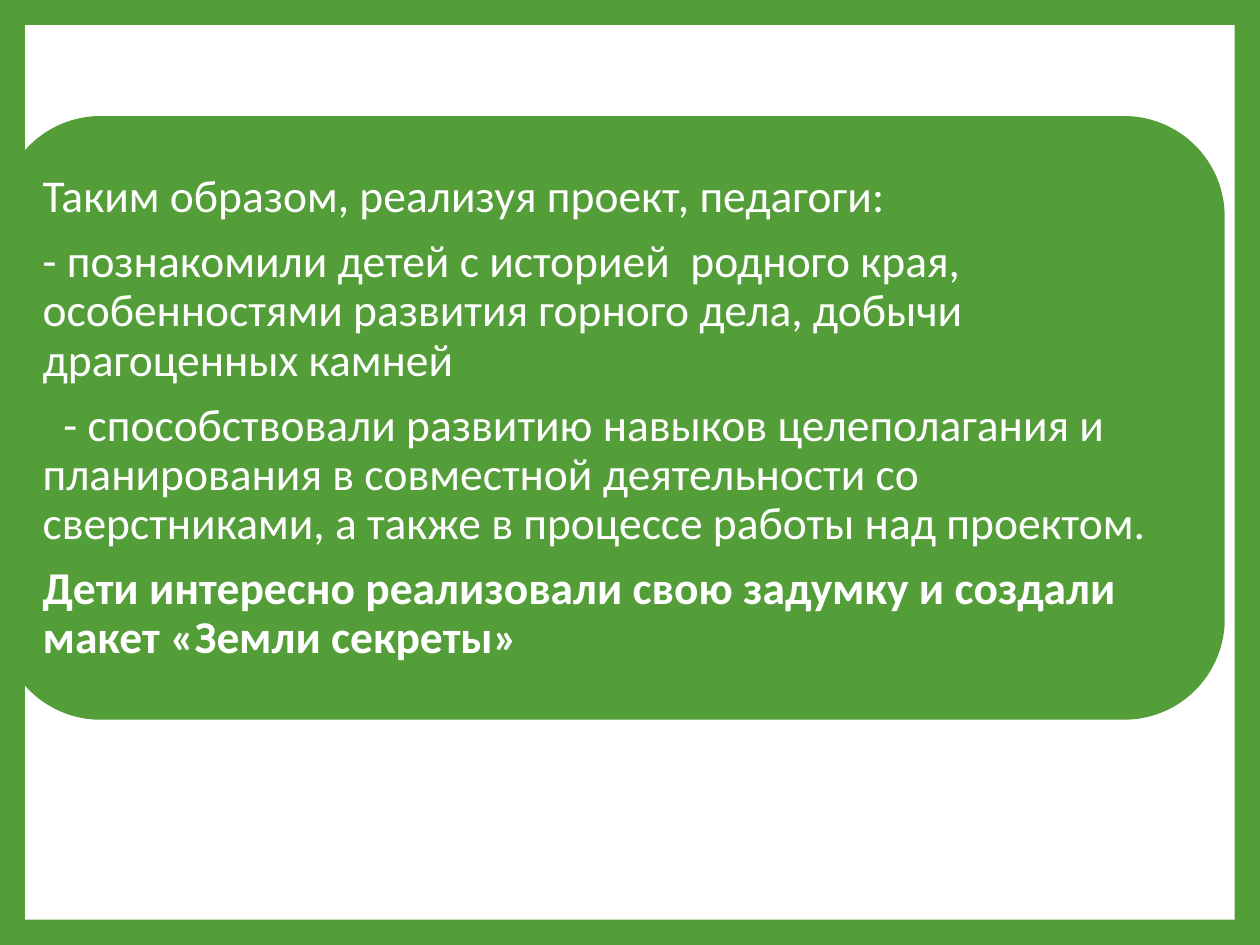
from dataclasses import dataclass

import pptx
import pptx.dml.color
import pptx.enum.shapes
import pptx.enum.text
import pptx.util
from pptx.util import Cm

GREEN = "549E39"
WHITE = "FFFFFF"
SHAPES = pptx.enum.shapes.MSO_SHAPE


@dataclass
class Panel:
    kind: int
    left: float
    top: float
    width: float
    height: float
    color: str


@dataclass
class Statement:
    text: str
    bold: bool = False
    indent: float = 0


PANELS = [
    Panel(SHAPES.RECTANGLE, 0.51, 0.51, 24.38, 18.03, WHITE),
    Panel(SHAPES.ROUNDED_RECTANGLE, 0, 2.34, 24.69, 12.17, GREEN),
]

STATEMENTS = [
    Statement("Таким образом, реализуя проект, педагоги:"),
    Statement("- познакомили детей с историей  родного края, особенностями "
              "развития горного дела, добычи драгоценных камней"),
    Statement("- способствовали развитию навыков целеполагания и планирования "
              "в совместной деятельности со сверстниками, а также в процессе "
              "работы над проектом.", indent=0.42),
    Statement("Дети интересно реализовали свою задумку и создали макет "
              "«Земли секреты»", bold=True),
]


def set_color(fmt, color: str) -> None:
    fmt.solid()
    fmt.fore_color.rgb = pptx.dml.color.RGBColor.from_string(color)


def add_panel(s, panel: Panel) -> None:
    sp = s.shapes.add_shape(panel.kind, Cm(panel.left), Cm(panel.top),
                            Cm(panel.width), Cm(panel.height))
    sp.shadow.inherit = False
    set_color(sp.fill, panel.color)
    sp.line.fill.background()


def add_statements(s, statements: list[Statement]) -> None:
    sp = s.shapes.add_textbox(Cm(0.58), Cm(2.95), Cm(23.52), Cm(10.97))
    tf = sp.text_frame
    tf.word_wrap = True
    tf.vertical_anchor = pptx.enum.text.MSO_ANCHOR.MIDDLE
    tf.margin_left = tf.margin_right = Cm(0.28)
    tf.margin_top = tf.margin_bottom = Cm(0.28)
    for i, statement in enumerate(statements):
        p = tf.add_paragraph() if i else tf.paragraphs[0]
        p.text = statement.text
        p.line_spacing = 0.9
        p.space_after = pptx.util.Pt(9.1)
        p.font.name = "Calibri"
        p.font.size = pptx.util.Pt(26)
        p.font.bold = statement.bold
        set_color(p.font.fill, WHITE)
        if statement.indent:
            p._p.get_or_add_pPr().set("indent", str(Cm(statement.indent)))


def main() -> None:
    prs = pptx.Presentation()
    prs.slide_width, prs.slide_height = Cm(25.4), Cm(19.05)
    s = prs.slides.add_slide(prs.slide_layouts[6])
    set_color(s.background.fill, GREEN)
    for panel in PANELS:
        add_panel(s, panel)
    add_statements(s, STATEMENTS)
    prs.save("out.pptx")


if __name__ == "__main__":
    main()
